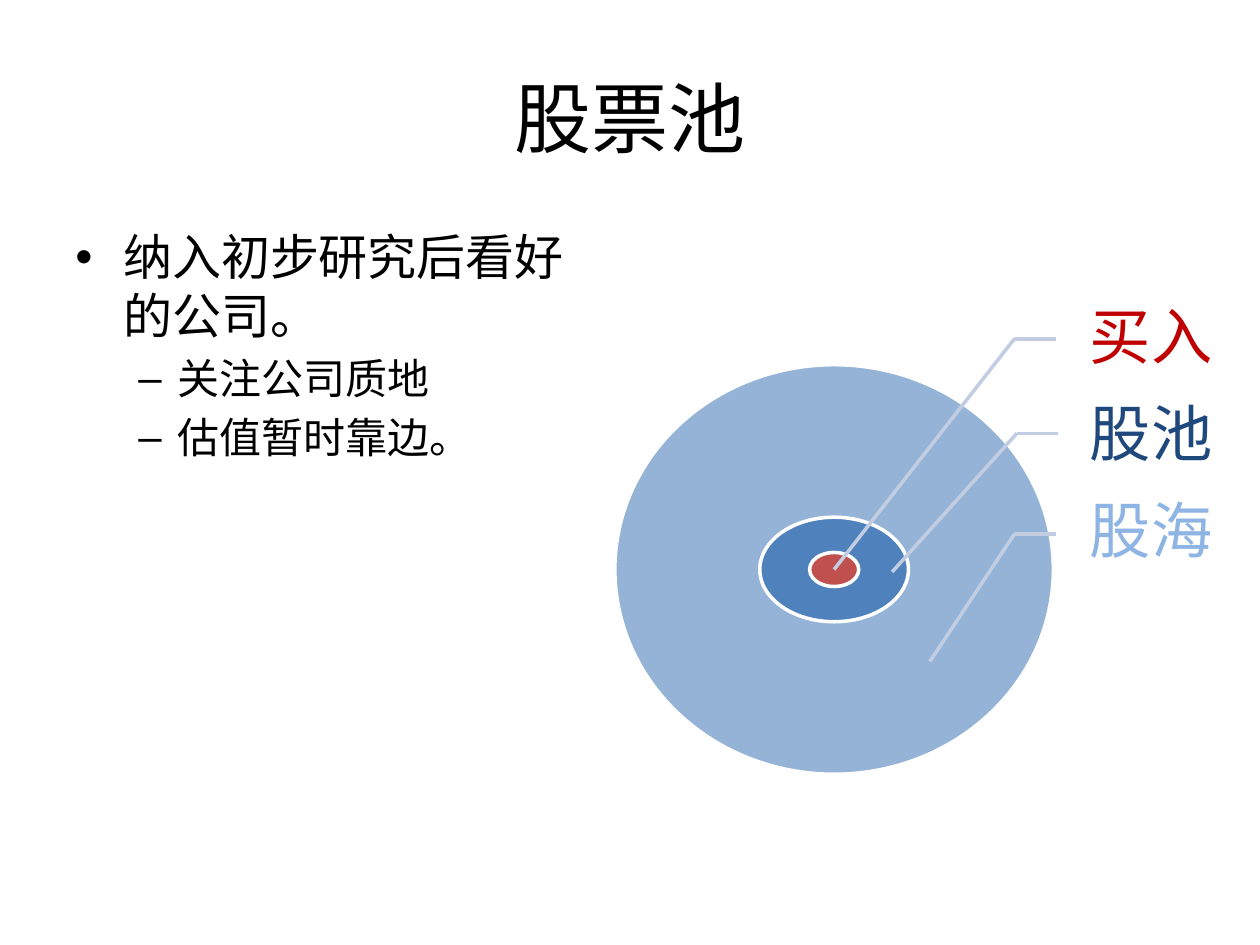
from typing import NamedTuple

from lxml.etree import SubElement
from pptx import Presentation
from pptx.dml.color import RGBColor
from pptx.enum.shapes import MSO_CONNECTOR, MSO_SHAPE
from pptx.enum.text import MSO_ANCHOR, PP_ALIGN
from pptx.oxml.ns import qn
from pptx.util import Inches, Pt

FONT = "Calibri"
BLACK = RGBColor(0x00, 0x00, 0x00)
WHITE = RGBColor(0xFF, 0xFF, 0xFF)
PALE = RGBColor(0x95, 0xB3, 0xD7)
BLUE = RGBColor(0x4F, 0x81, 0xBD)
RED = RGBColor(0xC0, 0x50, 0x4D)
LEAD = RGBColor(0xC2, 0xCD, 0xE1)
BUY = RGBColor(0xC0, 0x00, 0x00)
POOL = RGBColor(0x1F, 0x49, 0x7D)
SEA = RGBColor(0x8E, 0xB4, 0xE3)

MID_X, MID_Y = 6.62, 4.52  # shared centre of the rings
TAG_X, TAG_Y, TAG_W, TAG_H = 8.38, 2.31, 1.32, 0.77
ARM = 0.33  # flat part of each leader


class Ring(NamedTuple):
    width: float
    height: float
    fill: RGBColor


class Tag(NamedTuple):
    text: str
    color: RGBColor
    bend: tuple[float, float]
    tip: tuple[float, float]


class Point(NamedTuple):
    text: str
    level: int
    mark: str
    size: int
    left: float
    hang: float


RINGS = [Ring(3.48, 3.25, PALE), Ring(1.18, 0.83, BLUE), Ring(0.39, 0.27, RED)]
TAGS = [
    Tag("买入", BUY, (8.05, 2.69), (MID_X, MID_Y)),
    Tag("股池", POOL, (8.07, 3.44), (7.08, 4.54)),
    Tag("股海", SEA, (8.05, 4.24), (7.38, 5.25)),
]
POINTS = [
    Point("纳入初步研究后看好的公司。", 0, "•", 28, 0.38, 0.38),
    Point("关注公司质地", 1, "–", 24, 0.81, 0.31),
    Point("估值暂时靠边。", 1, "–", 24, 0.81, 0.31),
]


def add_box(slide, x: float, y: float, w: float, h: float, anchor):
    box = slide.shapes.add_textbox(Inches(x), Inches(y), Inches(w), Inches(h))
    frame = box.text_frame
    frame.word_wrap = True
    frame.vertical_anchor = anchor
    return frame


def add_run(para, text: str, size: int, color: RGBColor) -> None:
    run = para.add_run()
    run.text = text
    run.font.name = FONT
    run.font.size = Pt(size)
    run.font.color.rgb = color


def add_point(para, point: Point, first: bool) -> None:
    para.level = point.level
    props = para._p.get_or_add_pPr()
    props.set("marL", str(Inches(point.left)))
    props.set("indent", str(-Inches(point.hang)))
    if not first:
        para.space_before = Pt(point.size * 0.2)
    SubElement(props, qn("a:buFont"), typeface="Arial")
    SubElement(props, qn("a:buChar"), char=point.mark)
    add_run(para, point.text, point.size, BLACK)


def add_ring(slide, ring: Ring) -> None:
    shape = slide.shapes.add_shape(
        MSO_SHAPE.OVAL,
        Inches(MID_X - ring.width / 2), Inches(MID_Y - ring.height / 2),
        Inches(ring.width), Inches(ring.height))
    shape.shadow.inherit = False
    shape.fill.solid()
    shape.fill.fore_color.rgb = ring.fill
    shape.line.color.rgb = WHITE
    shape.line.width = Pt(2)


def add_line(slide, start: tuple[float, float], end: tuple[float, float]) -> None:
    line = slide.shapes.add_connector(
        MSO_CONNECTOR.STRAIGHT, *map(Inches, start), *map(Inches, end))
    line.line.color.rgb = LEAD
    line.line.width = Pt(2)
    SubElement(line._element.spPr, qn("a:effectLst"))


def add_tag(slide, tag: Tag, row: int) -> None:
    frame = add_box(slide, TAG_X, TAG_Y + row * TAG_H, TAG_W, TAG_H,
                    MSO_ANCHOR.MIDDLE)
    frame.margin_left = Inches(0.27)
    frame.margin_right = Inches(0.05)
    para = frame.paragraphs[0]
    para.line_spacing = 0.9
    add_run(para, tag.text, 35, tag.color)
    x, y = tag.bend
    add_line(slide, tag.bend, (x + ARM, y))
    add_line(slide, tag.bend, tag.tip)


def main() -> None:
    deck = Presentation()
    deck.slide_width, deck.slide_height = Inches(10), Inches(7.5)
    slide = deck.slides.add_slide(deck.slide_layouts[6])

    # Title
    para = add_box(slide, 0.5, 0.3, 9, 1.25, MSO_ANCHOR.MIDDLE).paragraphs[0]
    para.alignment = PP_ALIGN.CENTER
    add_run(para, "股票池", 44, BLACK)

    # Bullet list
    frame = add_box(slide, 0.5, 1.75, 4.42, 4.95, MSO_ANCHOR.TOP)
    for i, point in enumerate(POINTS):
        para = frame.add_paragraph() if i else frame.paragraphs[0]
        add_point(para, point, first=i == 0)

    # Nested rings, then their labels and leaders
    for ring in RINGS:
        add_ring(slide, ring)
    for row, tag in enumerate(TAGS):
        add_tag(slide, tag, row)

    deck.save("out.pptx")


if __name__ == "__main__":
    main()
